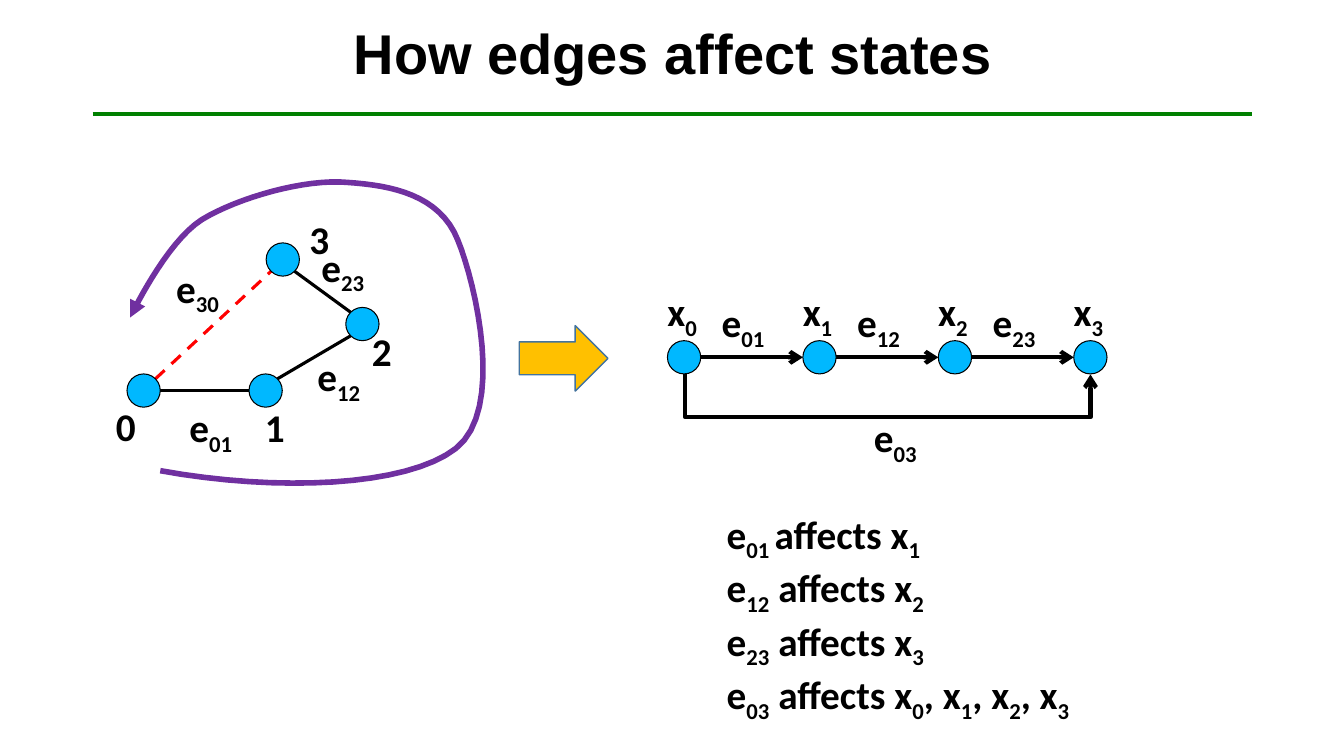
"""Build the slide on how graph edges affect states."""
from dataclasses import dataclass
from math import cos, radians, sin

from lxml import etree
from pptx import Presentation
from pptx.dml.color import RGBColor
from pptx.enum.dml import MSO_LINE
from pptx.enum.shapes import MSO_CONNECTOR, MSO_SHAPE
from pptx.enum.text import MSO_ANCHOR, MSO_AUTO_SIZE, PP_ALIGN
from pptx.oxml.ns import qn
from pptx.util import Inches, Pt

LINE = MSO_CONNECTOR.STRAIGHT
ELBOW = MSO_CONNECTOR.ELBOW
OVAL = MSO_SHAPE.OVAL
ARROW = MSO_SHAPE.RIGHT_ARROW
DASH = MSO_LINE.DASH
MIDDLE = MSO_ANCHOR.MIDDLE
CENTER = PP_ALIGN.CENTER
FIT = MSO_AUTO_SIZE.SHAPE_TO_FIT_TEXT


@dataclass(frozen=True)
class Theme:
    ink: str = "000000"
    node: str = "00B8FF"
    rule: str = "008000"
    close: str = "FF0000"
    sweep: str = "7030A0"
    arrow: str = "FFC000"
    rim: str = "43739E"
    head: str = "Arial"
    body: str = "Calibri"
    title: int = 40
    text: int = 28


THEME = Theme()
SIZE = 0.33
LOOP = [(1.26, 3.71), (2.47, 3.71), (3.43, 3.05), (2.64, 2.41)]
STEP = 4.03 / 3
CHAIN = [(6.62 + STEP * i, 3.38) for i in range(4)]
EDGES = ["e|01", "e|12", "e|23"]
START = (1.59, 4.67)
CURVES = [
    ((2.75, 4.88), (4.03, 4.83), (4.52, 4.45)),
    ((5.01, 4.07), (4.72, 2.82), (4.54, 2.38)),
    ((4.36, 1.93), (3.88, 1.84), (3.45, 1.81)),
    ((3.03, 1.77), (2.36, 1.96), (2.0, 2.18)),
    ((1.64, 2.41), (1.29, 3.15), (1.29, 3.15)),
]
FACTS = ["e|01 |affects x|1", "e|12| affects x|2", "e|23| affects x|3",
         "e|03| affects x|0|, x|1|, x|2|, x|3"]


def stroke(line, color, width, tip=None):
    """Set a line's colour, width and arrowhead."""
    line.color.rgb = RGBColor.from_string(color)
    line.width = Pt(width)
    if tip:
        etree.SubElement(line.color._xFill.getparent(), qn("a:tailEnd"), type=tip)


def link(slide, start, end, color, width, tip=None, kind=LINE):
    """Draw a connector between two points."""
    line = slide.shapes.add_connector(kind, *map(Inches, start + end))
    stroke(line.line, color, width, tip)
    etree.SubElement(line._element.spPr, qn("a:effectLst"))
    return line


def shape(slide, kind, box, fill, rim, width):
    """Draw a filled preset shape."""
    item = slide.shapes.add_shape(kind, *map(Inches, box))
    item.shadow.inherit = False
    item.fill.solid()
    item.fill.fore_color.rgb = RGBColor.from_string(fill)
    stroke(item.line, rim, width)


def style(para, face, size):
    """Set a paragraph's bold black font."""
    font = para.font
    font.name, font.size, font.bold = face, Pt(size), True
    font.color.rgb = RGBColor.from_string(THEME.ink)


def label(slide, box, *lines):
    """Add text whose every second piece is a subscript."""
    frame = slide.shapes.add_textbox(*map(Inches, box)).text_frame
    frame.word_wrap = False
    frame.auto_size = FIT
    for i, line in enumerate(lines):
        para = frame.add_paragraph() if i else frame.paragraphs[0]
        style(para, THEME.body, THEME.text)
        for j, piece in enumerate(line.split("|")):
            run = para.add_run()
            run.text = piece
            if j % 2:
                run.font._element.set("baseline", "-25000")


def port(node, turn):
    """Find the point on a node's rim at an angle in degrees."""
    half, turn = SIZE / 2, radians(turn)
    return (node[0] + half + half * cos(turn),
            node[1] + half - half * sin(turn))


def sweep(slide):
    """Draw the curved arrow around the loop."""
    last, points = START, []
    for one, two, end in CURVES:
        for i in range(1, 17):
            t = i / 16
            u = 1 - t
            points.append(tuple(
                Inches(u**3 * a + 3 * u * u * t * b + 3 * u * t * t * c + t**3 * d)
                for a, b, c, d in zip(last, one, two, end)))
        last = end
    path = slide.shapes.build_freeform(*map(Inches, START))
    path.add_line_segments(points, close=False)
    item = path.convert_to_shape()
    item.shadow.inherit = False
    item.fill.background()
    stroke(item.line, THEME.sweep, 4, "triangle")


def heading(slide):
    """Place the title and its rule."""
    title = slide.shapes.title
    title.left, title.top = Inches(0.92), Inches(0.01)
    title.width, title.height = Inches(11.5), Inches(1.09)
    title.text = "How edges affect states"
    title.text_frame.vertical_anchor = MIDDLE
    para = title.text_frame.paragraphs[0]
    para.alignment, para.line_spacing = CENTER, 0.9
    style(para, THEME.head, THEME.title)
    link(slide, (0.92, 1.13), (12.42, 1.13), THEME.rule, 3)


def loop(slide):
    """Draw the closed graph on the left."""
    for a, out, b, into in ((0, 0, 1, 180), (1, 45, 2, 225), (2, 135, 3, 315)):
        link(slide, port(LOOP[a], out), port(LOOP[b], into), THEME.ink, 2.25)
    back = link(slide, port(LOOP[0], 45), port(LOOP[3], 225), THEME.close, 2.25)
    back.line.dash_style = DASH
    for node in LOOP:
        shape(slide, OVAL, node + (SIZE, SIZE), THEME.node, THEME.ink, 0.75)
    spots = [(1.05, 3.94), (2.53, 3.95), (3.59, 3.2), (2.97, 2.09)]
    for i, spot in enumerate(spots):
        label(slide, spot + (0.4, 0.57), str(i))
    spots = [(1.78, 3.95), (3.05, 3.45), (3.09, 2.36), (1.65, 2.57)]
    for spot, name in zip(spots, EDGES + ["e|30"]):
        label(slide, spot + (0.67, 0.57), name)
    sweep(slide)


def chain(slide):
    """Draw the row of states on the right."""
    for a, b, name in zip(CHAIN, CHAIN[1:], EDGES):
        link(slide, port(a, 0), port(b, 180), THEME.ink, 3, "arrow")
        label(slide, (a[0] + 0.44, 2.91, 0.67, 0.57), name)
    bend = link(slide, (8.81, 1.7), (8.8, 5.72), THEME.ink, 3, "arrow", ELBOW)
    form = bend._element.spPr
    form.find(qn("a:xfrm")).set("rot", "16200000")
    geom = form.find(qn("a:prstGeom"))
    guides = geom.find(qn("a:avLst"))
    if guides is None:
        guides = etree.SubElement(geom, qn("a:avLst"))
    etree.SubElement(guides, qn("a:gd"), name="adj1", fmla="val 4400000")
    label(slide, (8.57, 4.05, 0.67, 0.57), "e|03")
    for i, node in enumerate(CHAIN):
        shape(slide, OVAL, node + (SIZE, SIZE), THEME.node, THEME.ink, 0.75)
        label(slide, (node[0] - 0.1, 2.8, 0.52, 0.57), f"x|{i}")


def main():
    """Build and save the slide."""
    deck = Presentation()
    deck.slide_width, deck.slide_height = Inches(13.33), Inches(7.5)
    slide = deck.slides.add_slide(deck.slide_layouts[5])
    heading(slide)
    loop(slide)
    shape(slide, ARROW, (5.15, 3.23, 0.88, 0.65), THEME.arrow, THEME.rim, 1)
    chain(slide)
    label(slide, (7.11, 5.01, 3.87, 2.3), *FACTS)
    deck.save("out.pptx")


if __name__ == "__main__":
    main()
